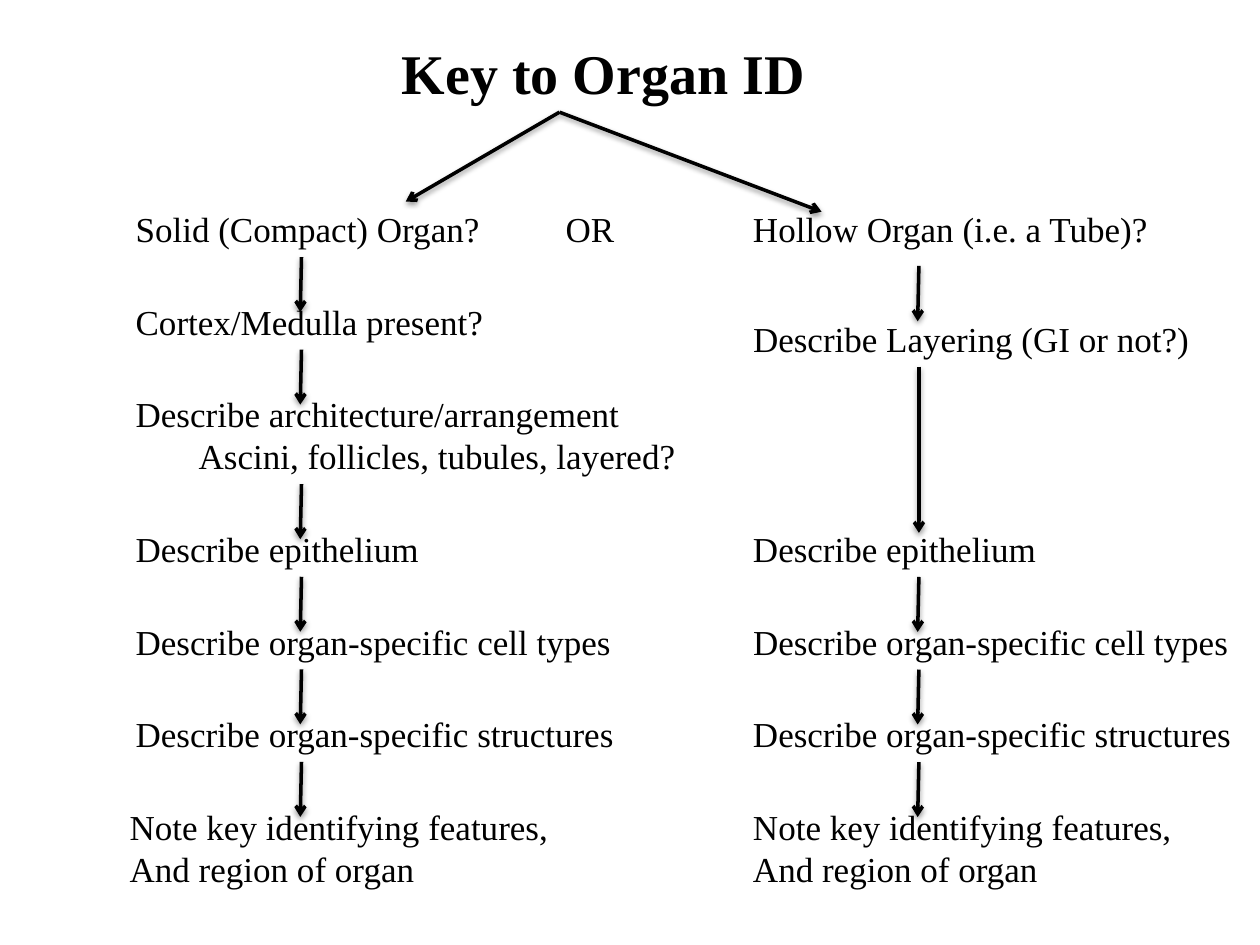
from dataclasses import dataclass

from lxml import etree
from pptx import Presentation
from pptx.dml.color import RGBColor
from pptx.enum.shapes import MSO_CONNECTOR
from pptx.enum.text import MSO_ANCHOR, MSO_AUTO_SIZE, PP_ALIGN
from pptx.oxml import parse_xml
from pptx.oxml.ns import nsdecls, qn
from pptx.util import Pt

STRAIGHT = MSO_CONNECTOR.STRAIGHT
LEFT = PP_ALIGN.LEFT
TOP, MIDDLE = MSO_ANCHOR.TOP, MSO_ANCHOR.MIDDLE
NO_FIT = MSO_AUTO_SIZE.NONE
TITLE_ONLY = 5


@dataclass(frozen=True)
class Theme:
    font: str = "Times New Roman"
    ink: RGBColor = RGBColor(0, 0, 0)
    title_size: int = 32
    text_size: int = 20
    line_width: int = 2


@dataclass(frozen=True)
class Step:
    """One text of a column; the arrow fields describe the arrow leading to it."""
    lines: tuple
    width: float
    gap: float = 21.2
    arrow_delay: float = 0
    arrow_overlap: float = 10.2
    arrow_drift: float = -0.7
    shift: float = 0


THEME = Theme()
FIRST_LINE = 31.7   # height of a one-line box
NEXT_LINE = 24      # height each further line adds
ARROW_X = 101.9     # arrow position from the column's left edge

SHADOW = (
    f'<a:effectLst {nsdecls("a")}>'
    '<a:outerShdw blurRad="40000" dist="20000" dir="5400000" rotWithShape="0">'
    '<a:srgbClr val="000000"><a:alpha val="38000"/></a:srgbClr>'
    '</a:outerShdw></a:effectLst>'
)


def write_lines(frame, lines, size, bold=False):
    frame.text = "\n".join(lines)
    frame.word_wrap = False
    frame.auto_size = NO_FIT
    for para in frame.paragraphs:
        para.alignment = LEFT
        para.font.name = THEME.font
        para.font.size = Pt(size)
        para.font.bold = bold
        para.font.color.rgb = THEME.ink


def add_text(page, left, top, width, lines):
    height = FIRST_LINE + NEXT_LINE * (len(lines) - 1)
    box = page.shapes.add_textbox(Pt(left), Pt(top), Pt(width), Pt(height))
    write_lines(box.text_frame, lines, THEME.text_size)
    box.text_frame.vertical_anchor = TOP
    return top + height


def add_arrow(page, start, end):
    points = [Pt(value) for value in (*start, *end)]
    arrow = page.shapes.add_connector(STRAIGHT, *points)
    arrow.line.color.rgb = THEME.ink
    arrow.line.width = Pt(THEME.line_width)
    etree.SubElement(arrow.line._get_or_add_ln(), qn("a:tailEnd"), type="arrow")
    arrow._element.spPr.append(parse_xml(SHADOW))


def place_heading(page, left, top, width, height):
    """Title with two arrows branching to the columns."""
    title = page.shapes.title
    title.left, title.top = Pt(left), Pt(top)
    title.width, title.height = Pt(width), Pt(height)
    write_lines(title.text_frame, ["Key to Organ ID"], THEME.title_size, bold=True)
    title.text_frame.vertical_anchor = MIDDLE
    fork = (left + 97.2, top + height)
    for across, down in ((-87.8, 51.1), (149.8, 56.9)):
        add_arrow(page, fork, (fork[0] + across, fork[1] + down))


def place_column(page, left, top, steps):
    """Stack of steps, each joined to the one above by an arrow."""
    bottom = None
    for step in steps:
        if bottom is not None:
            top = bottom + step.gap
            x = left + ARROW_X
            add_arrow(page, (x, bottom + step.arrow_delay),
                      (x + step.arrow_drift, top + step.arrow_overlap))
        bottom = add_text(page, left + step.shift, top, step.width, step.lines)


# Steps that both kinds of organ share
EPITHELIUM = ("Describe epithelium",)
FEATURES = ("Note key identifying features,", "And region of organ")
CELLS_AND_STRUCTURES = [
    Step(("Describe organ-specific cell types",), 288.7),
    Step(("Describe organ-specific structures",), 290.2),
]

SOLID_STEPS = [
    Step(("Solid (Compact) Organ?",), 212.4),
    Step(("Cortex/Medulla present?",), 214.6),
    Step(("Describe architecture/arrangement",
          "\tAscini, follicles, tubules, layered?"), 325.4),
    Step(EPITHELIUM, 177.8),
    *CELLS_AND_STRUCTURES,
    Step(FEATURES, 257, shift=-3.4),
]
HOLLOW_STEPS = [
    Step(("Hollow Organ (i.e. a Tube)?",), 241.9),
    Step(("Describe Layering (GI or not?)",), 265.7,
         gap=30.9, arrow_delay=5, arrow_overlap=5.8),
    Step(EPITHELIUM, 177.8, gap=88.5, arrow_overlap=6.5, arrow_drift=0),
    *CELLS_AND_STRUCTURES,
    Step(FEATURES, 257),
]


def main():
    deck = Presentation()
    deck.slide_width, deck.slide_height = Pt(720), Pt(540)
    page = deck.slides.add_slide(deck.slide_layouts[TITLE_ONLY])

    place_heading(page, 222.5, 18, 247, 46.1)
    row_top = 115.2
    place_column(page, 70.4, row_top, SOLID_STEPS)
    place_column(page, 423.2, row_top, HOLLOW_STEPS)
    add_text(page, 316.1, row_top, 42.5, ["OR"])

    deck.save("out.pptx")


if __name__ == "__main__":
    main()
